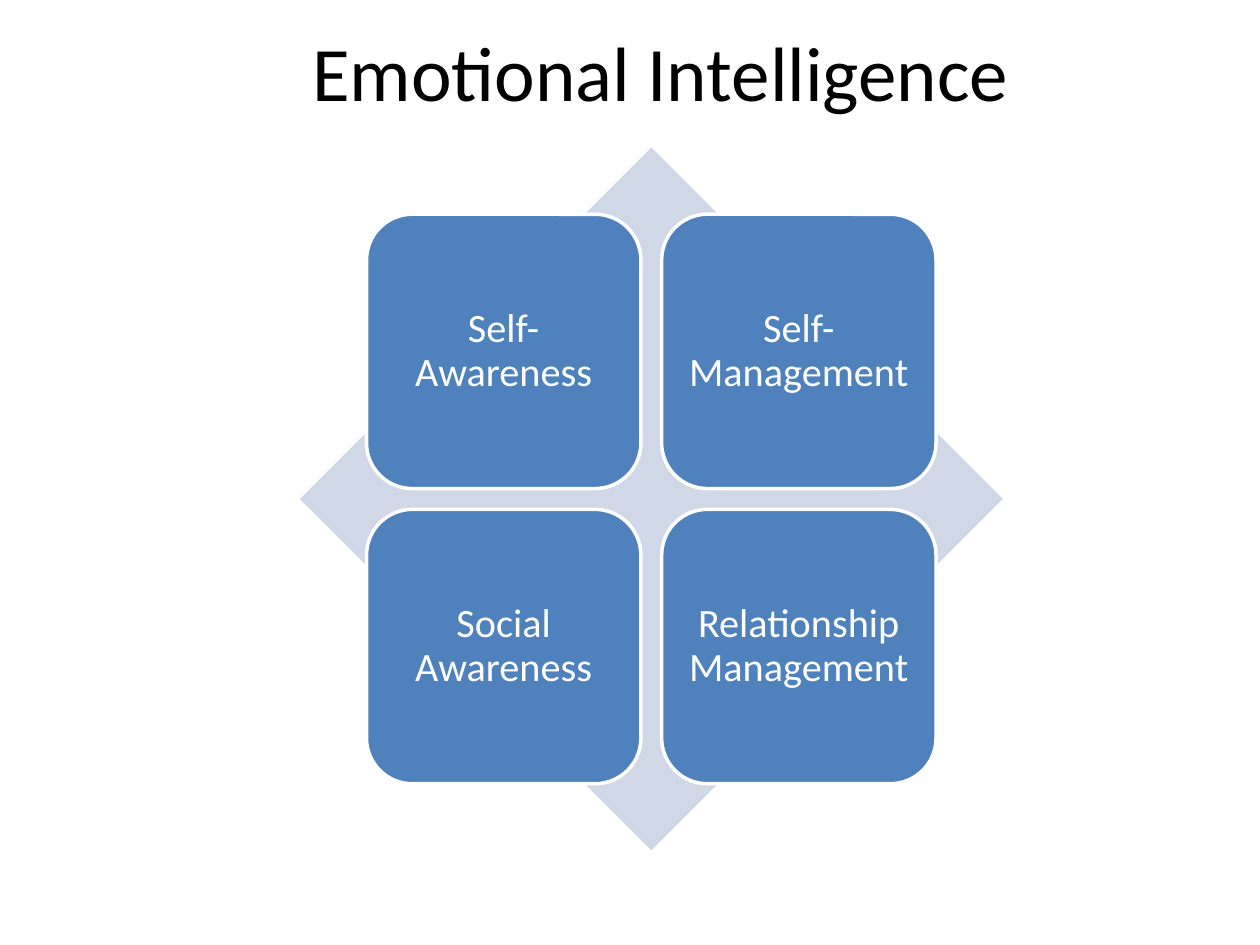
from typing import NamedTuple

from pptx import Presentation
from pptx import util as u
from pptx.dml.color import RGBColor
from pptx.enum import shapes, text

MID_X, MID_Y = 13.13, 10.06
SPAN, SIDE, GAP = 14.17, 5.53, 0.42


class Tile(NamedTuple):
    """One skill in the two by two grid."""
    label: str
    col: int
    row: int


TILES = [
    Tile("Self-Awareness", 0, 0),
    Tile("Self-Management", 1, 0),
    Tile("Social Awareness", 0, 1),
    Tile("Relationship Management", 1, 1),
]


def paint(fmt, color: str) -> None:
    """Give a fill a solid hex colour."""
    fmt.solid()
    fmt.fore_color.rgb = RGBColor.from_string(color)


def write(shape, words: str, *, size: float, color: str, anchor,
          space: float = 1.0, inset: float = 0.25, indent: float = 0) -> None:
    """Put one centred paragraph into a shape."""
    frame = shape.text_frame
    frame.word_wrap = True
    frame.auto_size = text.MSO_AUTO_SIZE.NONE
    frame.vertical_anchor = anchor
    frame.margin_left = frame.margin_right = u.Cm(0.25)
    frame.margin_top = frame.margin_bottom = u.Cm(inset)
    frame.text = words
    para = frame.paragraphs[0]
    para.alignment = text.PP_ALIGN.CENTER
    para.line_spacing = space
    if indent:
        props = para._p.get_or_add_pPr()
        props.set("marL", str(u.Cm(indent)))
        props.set("indent", "0")
    para.font.size = u.Pt(size)
    para.font.name = "Calibri"
    paint(para.font.fill, color)


def block(slide, kind, left: float, top: float, side: float, color: str):
    """Draw a square preset shape without outline."""
    shape = slide.shapes.add_shape(
        kind, u.Cm(left), u.Cm(top), u.Cm(side), u.Cm(side))
    shape.shadow.inherit = False
    paint(shape.fill, color)
    shape.line.fill.background()
    return shape


def draw(slide, tile: Tile) -> None:
    """Draw one labelled tile of the grid."""
    step = SIDE + GAP
    start = SIDE + GAP / 2
    box = block(slide, shapes.MSO_SHAPE.ROUNDED_RECTANGLE,
                MID_X - start + tile.col * step,
                MID_Y - start + tile.row * step, SIDE, "4F81BD")
    paint(box.line.fill, "FFFFFF")
    box.line.width = u.Pt(2)
    write(box, tile.label, size=23, color="FFFFFF", space=0.9,
          anchor=text.MSO_ANCHOR.MIDDLE)


def main() -> None:
    """Build and save the slide."""
    deck = Presentation()
    deck.slide_width, deck.slide_height = u.Cm(25.4), u.Cm(19.05)
    slide = deck.slides.add_slide(deck.slide_layouts[5])
    title = slide.shapes.title
    title.left, title.top = u.Cm(1.47), u.Cm(0.36)
    title.width, title.height = u.Cm(22.86), u.Cm(3.18)
    write(title, "Emotional Intelligence", size=44, color="000000",
          anchor=text.MSO_ANCHOR.TOP, inset=0.13, indent=0.84)
    block(slide, shapes.MSO_SHAPE.DIAMOND,
          MID_X - SPAN / 2, MID_Y - SPAN / 2, SPAN, "D0D8E8")
    for tile in TILES:
        draw(slide, tile)
    deck.save("out.pptx")


if __name__ == "__main__":
    main()
